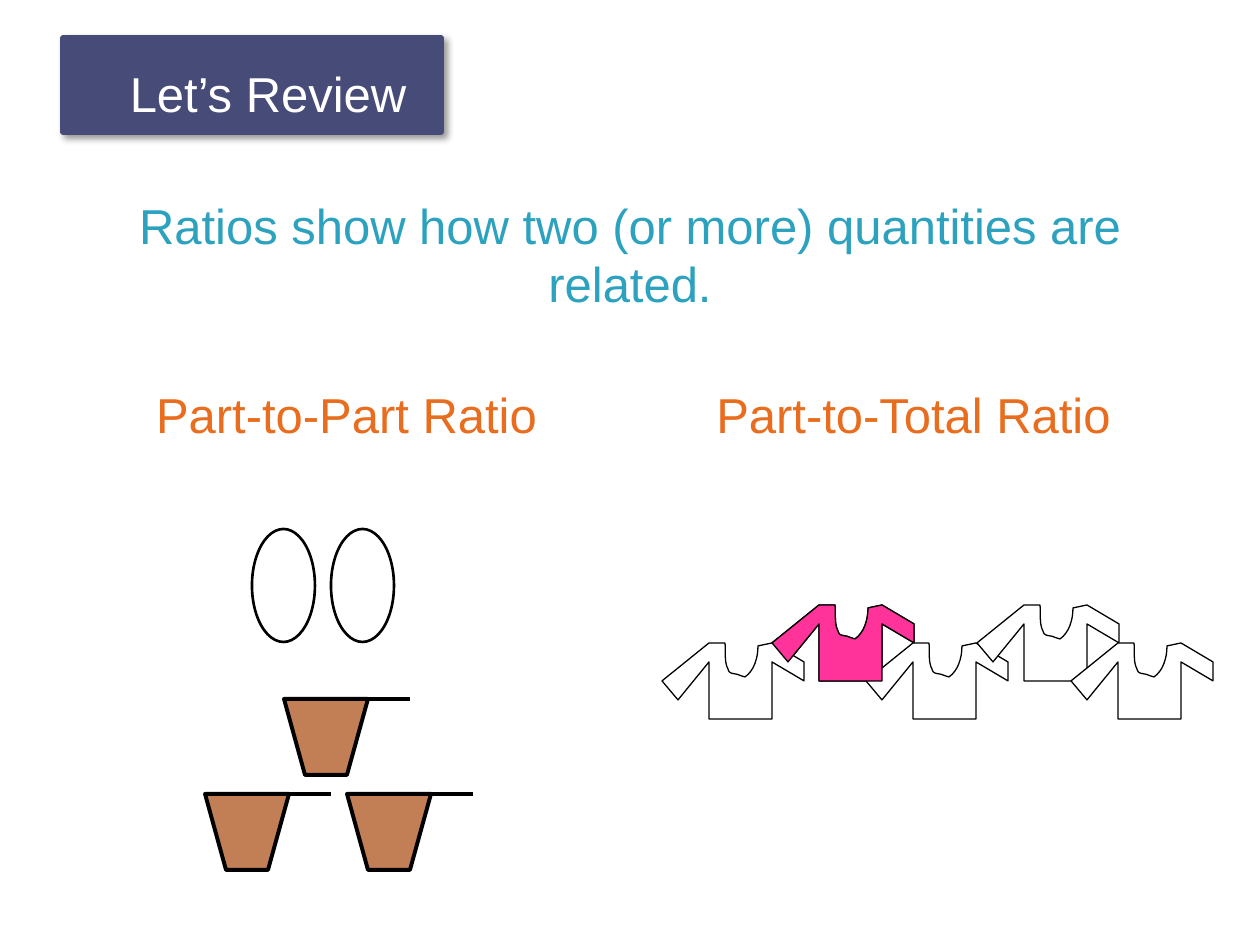
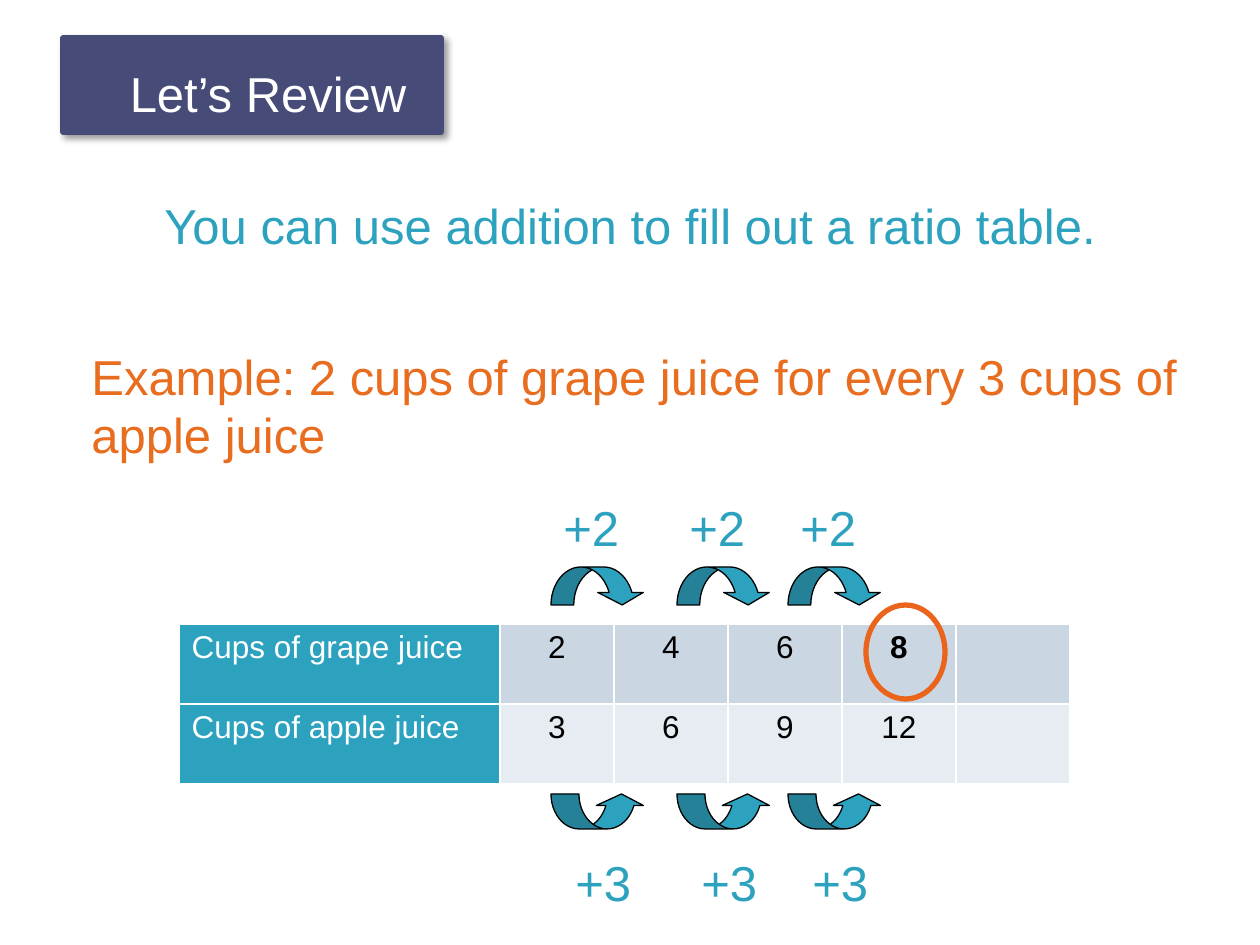
from dataclasses import dataclass

from lxml import etree
from pptx import Presentation
from pptx import util as u
from pptx.dml.color import RGBColor
from pptx.enum import shapes, text
from pptx.oxml import ns

# Shared scale, colours and type
EMU_PER_PX = 914400 / 126
FONT = "Arial"
WHITE = RGBColor(0xFF, 0xFF, 0xFF)
BLACK = RGBColor(0x00, 0x00, 0x00)
NAVY = RGBColor(0x47, 0x4B, 0x78)
TEAL = RGBColor(0x2D, 0xA2, 0xBF)
ORANGE = RGBColor(0xE8, 0x6D, 0x1F)
RING_ORANGE = RGBColor(0xEB, 0x64, 0x1B)
PINK = RGBColor(0xFF, 0x33, 0x99)
CLAY = RGBColor(0xC2, 0x7E, 0x54)
ROW_TINTS = (RGBColor(0xCB, 0xD6, 0xE3), RGBColor(0xE7, 0xEC, 0xF2))
LEFT, CENTER = text.PP_ALIGN.LEFT, text.PP_ALIGN.CENTER


@dataclass(frozen=True)
class Box:
    x: int
    y: int
    w: int
    h: int

    def emu(self) -> list[u.Emu]:
        return [px(n) for n in (self.x, self.y, self.w, self.h)]


@dataclass(frozen=True)
class Label:
    words: str
    box: Box
    color: RGBColor = TEAL
    align: text.PP_ALIGN = CENTER


@dataclass(frozen=True)
class JumpRow:
    """One row of curved arrows with the amount added at each step."""
    words: str
    preset: shapes.MSO_SHAPE
    adjustments: tuple
    arrow_y: int
    arrow_h: int
    label_dx: int
    label_y: int
    label_w: int


def px(n: float) -> u.Emu:
    return u.Emu(round(n * EMU_PER_PX))


# Drawing helpers
def format_paragraph(paragraph, color, size=28, align=LEFT, bold=False) -> None:
    paragraph.alignment = align
    paragraph.font.color.rgb = color
    for name, value in {"name": FONT, "size": u.Pt(size), "bold": bold}.items():
        setattr(paragraph.font, name, value)


def paint(shape, fill, line, width: float) -> None:
    shape.shadow.inherit = False
    if fill is None:
        shape.fill.background()
    else:
        shape.fill.solid()
        shape.fill.fore_color.rgb = fill
    shape.line.color.rgb = line
    shape.line.width = u.Pt(width)


def add_label(slide, label: Label) -> None:
    frame = slide.shapes.add_textbox(*label.box.emu()).text_frame
    frame.word_wrap = True
    frame.text = label.words
    format_paragraph(frame.paragraphs[0], label.color, align=label.align)


def add_preset(slide, preset, box: Box, fill, line, width: float):
    shape = slide.shapes.add_shape(preset, *box.emu())
    paint(shape, fill, line, width)
    return shape


def add_outline(slide, points, x: int, y: int, fill, width: float) -> None:
    corners = [(px(a), px(b)) for a, b in points]
    builder = slide.shapes.build_freeform(*corners[0])
    builder.add_line_segments(corners[1:], close=True)
    paint(builder.convert_to_shape(px(x), px(y)), fill, BLACK, width)


def add_shadow(shape) -> None:
    effects = shape._element.spPr.find(ns.qn("a:effectLst"))
    shadow = etree.SubElement(effects, ns.qn("a:outerShdw"), blurRad=str(u.Pt(4)),
                              dist=str(u.Pt(3)), dir="2700000", algn="tl")
    color = etree.SubElement(shadow, ns.qn("a:srgbClr"), val=str(BLACK))
    etree.SubElement(color, ns.qn("a:alpha"), val="40000")


def new_slide(deck, headline: str):
    """Blank slide with the teal headline and the title band."""
    slide = deck.slides.add_slide(deck.slide_layouts[6])
    add_label(slide, Label(headline, Box(126, 189, 1008, 265)))
    band = add_preset(slide, shapes.MSO_SHAPE.RECTANGLE, Box(63, 38, 378, 94), NAVY, NAVY, 3)
    add_shadow(band)
    add_label(slide, Label("Let’s Review", Box(95, 57, 346, 72), WHITE))
    return slide


# Ratio drawings
def curve(start, *controls, steps: int = 8) -> list:
    """Points along a cubic curve, without its start."""
    nodes = (start, *controls)
    result = []
    for i in range(1, steps + 1):
        t = i / steps
        weights = ((1 - t) ** 3, 3 * t * (1 - t) ** 2, 3 * t * t * (1 - t), t ** 3)
        result.append(tuple(sum(w * node[axis] for w, node in zip(weights, nodes))
                            for axis in (0, 1)))
    return result


def shirt_points() -> list:
    points = [(63, 0)]
    for controls in (((64, 9), (62, 19), (66, 26)),
                     ((67, 32), (73, 30), (77, 32)),
                     ((79, 33), (83, 34), (83, 34)),
                     ((92, 28), (96, 15), (96, 3))):
        points += curve(points[-1], *controls)
    return points + [(110, 0), (142, 19), (142, 38), (110, 19), (110, 76), (47, 76),
                     (47, 19), (16, 57), (0, 38), (47, 0)]


def add_cup(slide, x: int, y: int) -> None:
    rim = slide.shapes.add_connector(shapes.MSO_CONNECTOR.STRAIGHT,
                                     px(x), px(y), px(x + 126), px(y))
    rim.line.color.rgb = BLACK
    rim.line.width = u.Pt(2.25)
    etree.SubElement(rim._element.spPr, ns.qn("a:effectLst"))
    add_outline(slide, [(0, 0), (21, 76), (63, 76), (84, 0)], x, y, CLAY, 2.25)


def build_ratio_kinds(deck) -> None:
    slide = new_slide(deck, "Ratios show how two (or more) quantities are related.")
    for words, x in (("Part-to-Part Ratio", 126), ("Part-to-Total Ratio", 693)):
        add_label(slide, Label(words, Box(x, 378, 441, 113), ORANGE))

    # One pink shirt out of five
    back_y, front_y = 605, 643
    shirt = shirt_points()
    for x, y, fill in ((772, back_y, WHITE), (662, front_y, WHITE), (866, front_y, WHITE),
                       (977, back_y, WHITE), (1071, front_y, WHITE), (772, back_y, PINK)):
        add_outline(slide, shirt, x, y, fill, 0.75)

    # Two eggs to three cups
    for x in (252, 331):
        add_preset(slide, shapes.MSO_SHAPE.OVAL, Box(x, 529, 63, 113), WHITE, BLACK, 1.5)
    for x, y in ((205, 794), (284, 699), (347, 794)):
        add_cup(slide, x, y)


# Ratio table
JUICE_ROWS = (("Cups of grape juice", "2", "4", "6", "8", ""),
              ("Cups of apple juice", "3", "6", "9", "12", ""))
JUMP_XS = (551, 677, 788)
JUMP_ROWS = (
    JumpRow("+2", shapes.MSO_SHAPE.CURVED_DOWN_ARROW, (0.6, 1.2, 0.33), 567, 38, 0, 491, 110),
    JumpRow("+3", shapes.MSO_SHAPE.CURVED_UP_ARROW, (0.8, 1.6, 0.33), 794, 35, 12, 846, 83),
)


def add_borders(cell) -> None:
    properties = cell._tc.get_or_add_tcPr()
    for place, side in enumerate(("lnL", "lnR", "lnT", "lnB")):
        line = etree.Element(ns.qn(f"a:{side}"), w=str(u.Pt(1)))
        fill = etree.SubElement(line, ns.qn("a:solidFill"))
        etree.SubElement(fill, ns.qn("a:srgbClr"), val=str(WHITE))
        properties.insert(place, line)


def add_juice_table(slide) -> None:
    head_w, count_w, row_h = 321, 114, 80
    table = slide.shapes.add_table(2, 6, *Box(179, 624, head_w + 5 * count_w, 2 * row_h).emu()).table
    for i, column in enumerate(table.columns):
        column.width = px(count_w if i else head_w)
    for row, values, tint in zip(table.rows, JUICE_ROWS, ROW_TINTS):
        row.height = px(row_h)
        for i, (cell, value) in enumerate(zip(row.cells, values)):
            cell.text = value
            format_paragraph(cell.text_frame.paragraphs[0], BLACK if i else WHITE, 18,
                             CENTER if i else LEFT, value == "8")
            cell.fill.solid()
            cell.fill.fore_color.rgb = tint if i else TEAL
            add_borders(cell)


def build_ratio_table(deck) -> None:
    slide = new_slide(deck, "You can use addition to fill out a ratio table.")
    add_label(slide, Label("Example: 2 cups of grape juice for every 3 cups of apple juice",
                           Box(79, 340, 1118, 113), ORANGE, LEFT))
    add_juice_table(slide)
    add_preset(slide, shapes.MSO_SHAPE.OVAL, Box(866, 605, 79, 94), None, RING_ORANGE, 3)
    for jump in JUMP_ROWS:
        for x in JUMP_XS:
            arrow = add_preset(slide, jump.preset, Box(x, jump.arrow_y, 94, jump.arrow_h),
                               TEAL, BLACK, 0.75)
            for i, value in enumerate(jump.adjustments):
                arrow.adjustments[i] = value
            add_label(slide, Label(jump.words, Box(x + jump.label_dx, jump.label_y,
                                                   jump.label_w, 72), align=LEFT))


def main() -> None:
    deck = Presentation()
    for name, value in {"slide_width": px(1260), "slide_height": px(945)}.items():
        setattr(deck, name, value)
    build_ratio_kinds(deck)
    build_ratio_table(deck)
    deck.save("out.pptx")


if __name__ == "__main__":
    main()
